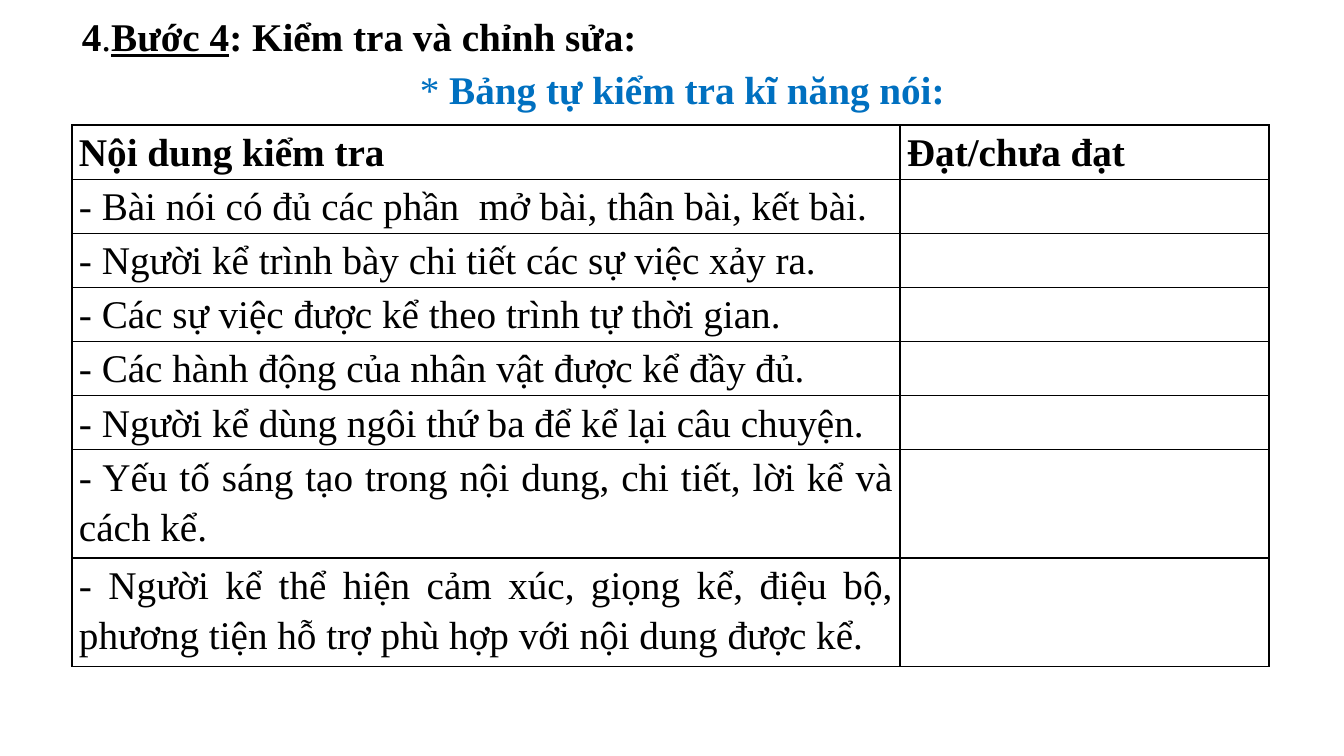
from lxml import etree
from pptx import Presentation
from pptx.dml.color import RGBColor
from pptx.enum.text import MSO_AUTO_SIZE, PP_ALIGN
from pptx.oxml.ns import qn
from pptx.util import Pt

JUSTIFY = PP_ALIGN.JUSTIFY
FIT_SHAPE = MSO_AUTO_SIZE.SHAPE_TO_FIT_TEXT

# Content: each run is (text, bold, underline)
BLACK, BLUE = "000000", "0070C0"
HEADINGS = [
    ((72, 0, 581, 61), BLACK, [
        ("4", True, False),
        (".", False, False),
        ("Bước 4", True, True),
        (": Kiểm tra và chỉnh sửa:", True, False),
    ]),
    ((410, 53, 551, 61), BLUE, [
        ("* ", False, False),
        ("Bảng tự kiểm tra kĩ năng nói:", True, False),
    ]),
]
HEADER = ["Nội dung kiểm tra", "Đạt/chưa đạt"]
# Each criterion is (text, number of lines)
CRITERIA = [
    ("- Bài nói có đủ các phần  mở bài, thân bài, kết bài.", 1),
    ("- Người kể trình bày chi tiết các sự việc xảy ra.", 1),
    ("- Các sự việc được kể theo trình tự thời gian.", 1),
    ("- Các hành động của nhân vật được kể đầy đủ.", 1),
    ("- Người kể dùng ngôi thứ ba để kể lại câu chuyện.", 1),
    ("- Yếu tố sáng tạo trong nội dung, chi tiết, lời kể và cách kể.", 2),
    ("- Người kể thể hiện cảm xúc, giọng kể, điệu bộ, phương tiện hỗ trợ "
     "phù hợp với nội dung được kể.", 2),
]

# Layout in px
SLIDE_SIZE = (1344, 756)
TABLE_LEFT, TABLE_TOP = 72, 125
COLUMN_WIDTHS = [828, 369]
LINE_HEIGHT = 54
CELL_MARGIN = 7


def px(length):
    return round(length * 914400 / 100.8)


def color(value):
    return RGBColor.from_string(value)


def write_runs(paragraph, runs, text_color):
    paragraph.alignment = JUSTIFY
    paragraph.line_spacing = 1.15
    for text, bold, underline in runs:
        run = paragraph.add_run()
        run.text = text
        run.font.name = "Times New Roman"
        run.font.size = Pt(28)
        run.font.bold = bold
        run.font.underline = underline
        run.font.color.rgb = color(text_color)


def add_borders(cell):
    properties = cell._tc.get_or_add_tcPr()
    for position, side in enumerate(("a:lnL", "a:lnR", "a:lnT", "a:lnB")):
        line = etree.Element(qn(side), w=str(Pt(1)))
        fill = etree.SubElement(line, qn("a:solidFill"))
        etree.SubElement(fill, qn("a:srgbClr"), val=BLACK)
        properties.insert(position, line)


presentation = Presentation()
presentation.slide_width, presentation.slide_height = map(px, SLIDE_SIZE)
slide = presentation.slides.add_slide(presentation.slide_layouts[6])

# Headings
for box, text_color, runs in HEADINGS:
    text_frame = slide.shapes.add_textbox(*map(px, box)).text_frame
    text_frame.word_wrap = False
    text_frame.auto_size = FIT_SHAPE
    paragraph = text_frame.paragraphs[0]
    paragraph.space_after = Pt(10)
    write_runs(paragraph, runs, text_color)

# Self-check table
rows = [HEADER] + [[text, ""] for text, _ in CRITERIA]
line_counts = [1] + [count for _, count in CRITERIA]
table = slide.shapes.add_table(
    len(rows), len(COLUMN_WIDTHS), px(TABLE_LEFT), px(TABLE_TOP),
    px(sum(COLUMN_WIDTHS)), px(sum(line_counts) * LINE_HEIGHT)).table
for column, width in zip(table.columns, COLUMN_WIDTHS):
    column.width = px(width)
for row_index, (texts, line_count) in enumerate(zip(rows, line_counts)):
    table.rows[row_index].height = px(line_count * LINE_HEIGHT)
    for column_index, text in enumerate(texts):
        cell = table.cell(row_index, column_index)
        cell.fill.background()
        cell.margin_left = cell.margin_right = px(CELL_MARGIN)
        cell.margin_top = cell.margin_bottom = 0
        add_borders(cell)
        if text:
            write_runs(cell.text_frame.paragraphs[0],
                       [(text, row_index == 0, False)], BLACK)

presentation.save("out.pptx")
